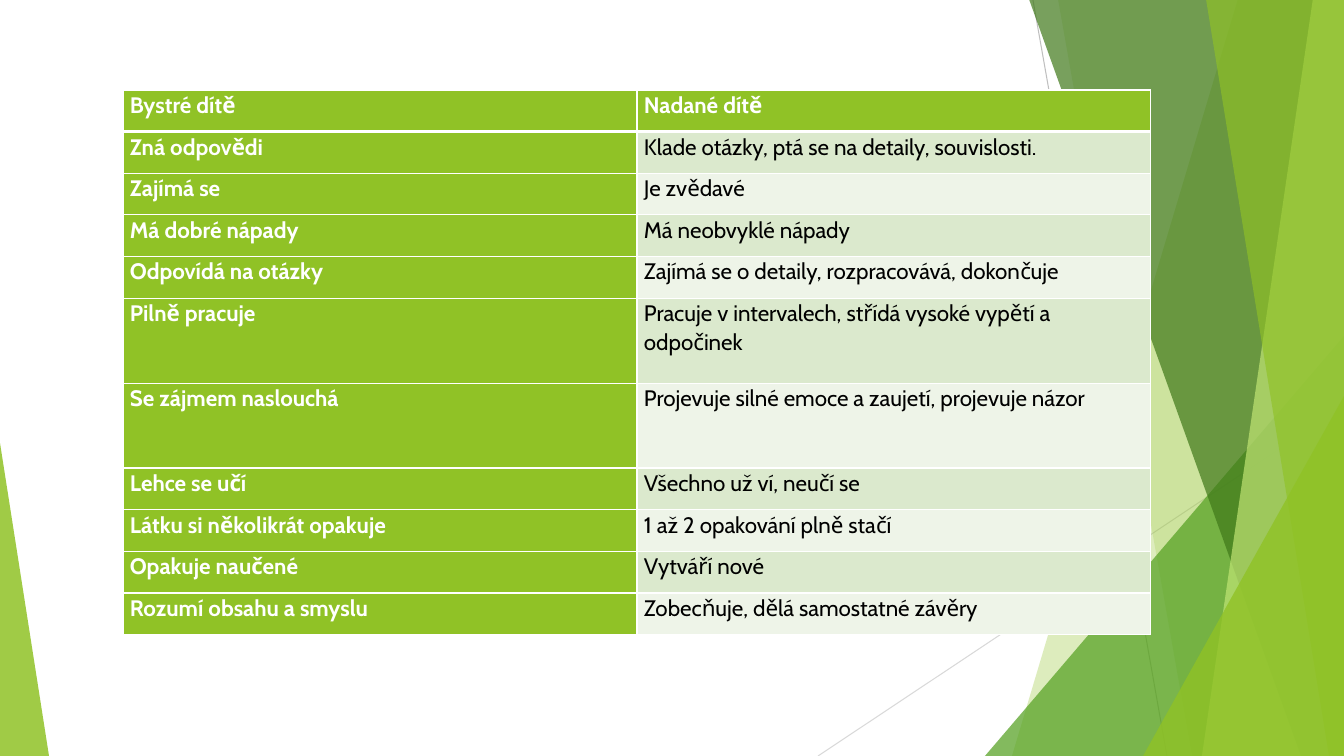
from pptx import Presentation
from pptx import util as u
from pptx.dml.color import RGBColor
from pptx.enum import shapes, text
from pptx.oxml import parse_xml
from pptx.oxml.ns import nsdecls, qn

WIDTH, HEIGHT = 1344, 756
GREEN = "90C226"
WHITE = "FFFFFF"
BANDS = ("DBE9CD", "EEF4E8")
TALL_ROWS = (5, 6)
COMPARISON = [
    ("Bystré dítě", "Nadané dítě"),
    ("Zná odpovědi", "Klade otázky, ptá se na detaily, souvislosti."),
    ("Zajímá se", "Je zvědavé"),
    ("Má dobré nápady", "Má neobvyklé nápady"),
    ("Odpovídá na otázky", "Zajímá se o detaily, rozpracovává, dokončuje"),
    ("Pilně pracuje", "Pracuje v intervalech, střídá vysoké vypětí a odpočinek"),
    ("Se zájmem naslouchá", "Projevuje silné emoce a zaujetí, projevuje názor"),
    ("Lehce se učí", "Všechno už ví, neučí se"),
    ("Látku si několikrát opakuje", "1 až 2 opakování plně stačí"),
    ("Opakuje naučené", "Vytváří nové"),
    ("Rozumí obsahu a smyslu", "Zobecňuje, dělá samostatné závěry"),
]


def px(length):
    return u.Emu(round(length * 914400 / 100.8))


def color(value):
    return RGBColor.from_string(value)


def write(frame, content, font="Cabin", size=16, fill="000000", bold=False, spacing=1.07):
    paragraph = frame.paragraphs[0]
    paragraph.line_spacing = spacing
    paragraph.alignment = text.PP_ALIGN.LEFT
    run = paragraph.add_run()
    run.text = content
    run.font.name = font
    run.font.size = u.Pt(size)
    run.font.bold = bold
    run.font.color.rgb = color(fill)


class SlideBuilder:
    def __init__(self, slide):
        self.slide = slide

    def line(self, start, end, stroke):
        connector = self.slide.shapes.add_connector(
            shapes.MSO_CONNECTOR.STRAIGHT, *map(px, start + end))
        connector.line.color.rgb = color(stroke)
        connector.line.width = u.Pt(0.75)
        connector._element.spPr.append(parse_xml(f"<a:effectLst {nsdecls('a')}/>"))

    def paint(self, shape, fill, opacity):
        shape.shadow.inherit = False
        shape.line.fill.background()
        shape.fill.solid()
        shape.fill.fore_color.rgb = color(fill)
        shade = shape._element.spPr.find(f".//{qn('a:srgbClr')}")
        shade.append(parse_xml(f'<a:alpha {nsdecls("a")} val="{opacity * 1000}"/>'))

    def ribbon(self, top, bottom, fill, opacity):
        corners = [(WIDTH, -1), (WIDTH, HEIGHT), (bottom, HEIGHT)]
        builder = self.slide.shapes.build_freeform(px(top), px(-1), 1.0)
        builder.add_line_segments([(px(x), px(y)) for x, y in corners], close=True)
        self.paint(builder.convert_to_shape(), fill, opacity)

    def triangle(self, left, top, width, apex, fill, opacity):
        shape = self.slide.shapes.add_shape(
            shapes.MSO_SHAPE.ISOSCELES_TRIANGLE,
            *map(px, (left, top, width, HEIGHT - top)))
        shape.adjustments[0] = apex
        self.paint(shape, fill, opacity)

    def borders(self, cell, header):
        properties = cell._tc.get_or_add_tcPr()
        for side in "LRTB":
            points = 3 if header and side == "B" else 1
            properties.append(parse_xml(
                f'<a:ln{side} {nsdecls("a")} w="{u.Pt(points)}"><a:solidFill>'
                f'<a:srgbClr val="{WHITE}"/></a:solidFill></a:ln{side}>'))

    def table(self, left, top, width, height, rows, tall_rows, tall_height):
        frame = self.slide.shapes.add_table(
            len(rows), len(rows[0]), *map(px, (left, top, width, height)))
        table = frame.table
        table.horz_banding = False
        short_height = (height - tall_height * len(tall_rows)) / (len(rows) - len(tall_rows))
        for row_index, row in enumerate(rows):
            header = row_index == 0
            table.rows[row_index].height = px(
                tall_height if row_index in tall_rows else short_height)
            for column_index, content in enumerate(row):
                accent = header or column_index == 0
                cell = table.cell(row_index, column_index)
                cell.margin_left = cell.margin_right = px(7)
                cell.margin_top = cell.margin_bottom = 0
                self.borders(cell, header)
                cell.fill.solid()
                cell.fill.fore_color.rgb = color(
                    GREEN if accent else BANDS[(row_index - 1) % 2])
                write(cell.text_frame, content,
                      fill=WHITE if accent else "000000", bold=accent)


def main():
    presentation = Presentation()
    presentation.slide_width = px(WIDTH)
    presentation.slide_height = px(HEIGHT)
    builder = SlideBuilder(presentation.slides.add_slide(presentation.slide_layouts[6]))

    builder.line((1033, 0), (1167, HEIGHT), "BFBFBF")
    builder.line((WIDTH, 406), (818, HEIGHT), "D9D9D9")
    builder.ribbon(1238, 1012, GREEN, 30)
    builder.ribbon(1058, 1192, GREEN, 20)
    builder.triangle(985, 336, 359, 1, "54A021", 72)
    builder.ribbon(1029, 1301, "3F7819", 70)
    builder.ribbon(1313, 1202, "C0E474", 70)
    builder.ribbon(1206, 1329, GREEN, 65)
    builder.triangle(1143, 396, 201, 1, GREEN, 80)
    builder.triangle(0, 443, 49, 0, GREEN, 85)
    builder.table(123, 90, 1028, 545, COMPARISON, TALL_ROWS, 85)

    presentation.save("out.pptx")


if __name__ == "__main__":
    main()
